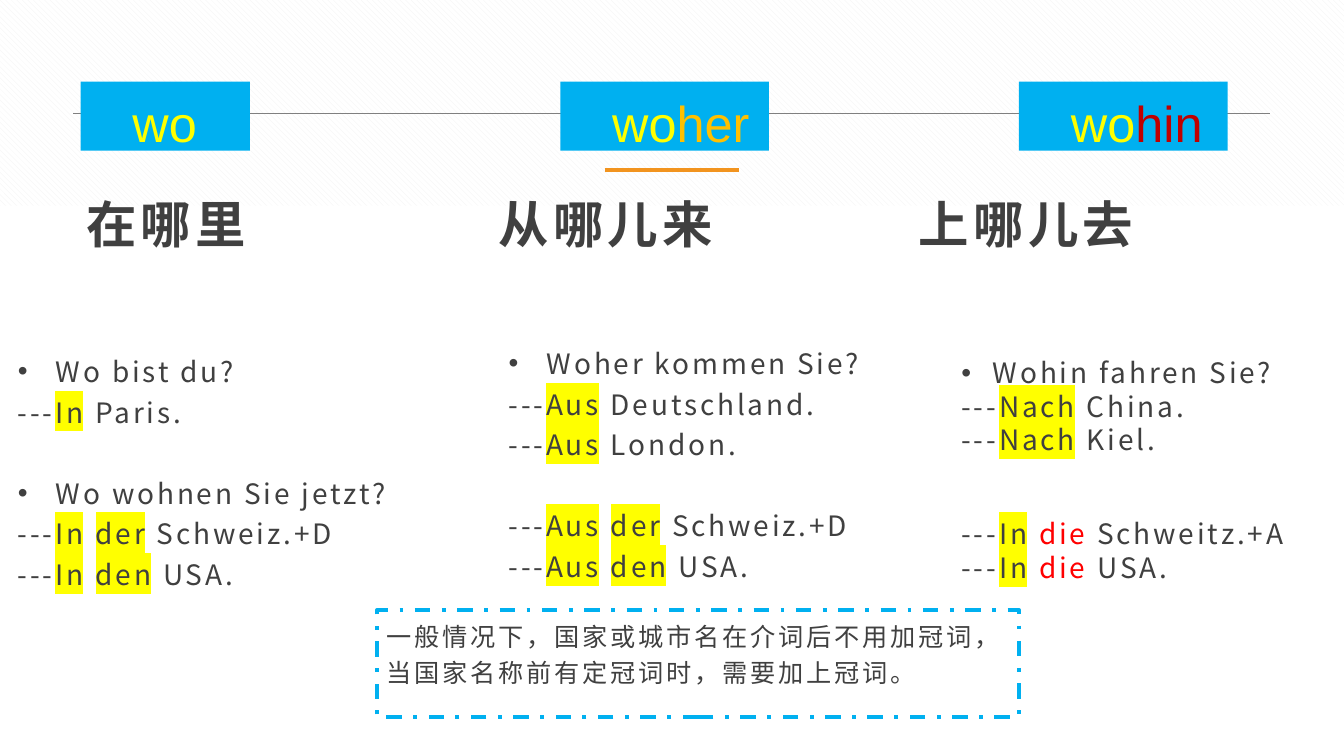
from dataclasses import dataclass

from lxml import etree
from pptx import Presentation
from pptx.dml.color import RGBColor
from pptx.enum.dml import MSO_LINE, MSO_PATTERN
from pptx.enum.shapes import MSO_CONNECTOR, MSO_SHAPE
from pptx.enum.text import MSO_ANCHOR, PP_ALIGN
from pptx.oxml.ns import qn
from pptx.util import Cm, Pt

STRAIGHT = MSO_CONNECTOR.STRAIGHT
RECTANGLE = MSO_SHAPE.RECTANGLE
DIAGONAL = MSO_PATTERN.WIDE_DOWNWARD_DIAGONAL
DASH_DOT = MSO_LINE.DASH_DOT
TOP = MSO_ANCHOR.TOP
LEFT = PP_ALIGN.LEFT


@dataclass(frozen=True)
class Theme:
    """Colours, fonts and type sizes of the slide."""

    white: str = "FFFFFF"
    hatch: str = "F2F2F2"
    rule: str = "808080"
    text: str = "404040"
    blue: str = "00B0F0"
    orange: str = "F2941F"
    gold: str = "FFC000"
    yellow: str = "FFFF00"
    red: str = "FF0000"
    dark_red: str = "C00000"
    latin: str = "Arial"
    body_font: str = "Noto Sans CJK SC"
    heading: int = 36
    body: int = 20
    note: int = 18


class SlideBuilder:
    """Draws styled elements on the current slide."""

    def __init__(self, slide, theme):
        self.slide = slide
        self.theme = theme

    def background(self):
        fill = self.slide.background.fill
        fill.patterned()
        fill.pattern = DIAGONAL
        fill.fore_color.rgb = RGBColor.from_string(self.theme.hatch)
        fill.back_color.rgb = RGBColor.from_string(self.theme.white)

    def line(self, left, right, top, color, width):
        connector = self.slide.shapes.add_connector(
            STRAIGHT, Cm(left), Cm(top), Cm(right), Cm(top))
        connector.line.color.rgb = RGBColor.from_string(color)
        connector.line.width = Pt(width)
        etree.SubElement(connector._element.spPr, qn("a:effectLst"))

    def rectangle(self, left, top, width, height, fill=None, border=None):
        shape = self.slide.shapes.add_shape(
            RECTANGLE, Cm(left), Cm(top), Cm(width), Cm(height))
        shape.shadow.inherit = False
        if fill:
            shape.fill.solid()
            shape.fill.fore_color.rgb = RGBColor.from_string(fill)
        else:
            shape.fill.background()
        if border:
            shape.line.color.rgb = RGBColor.from_string(border)
            shape.line.width = Pt(2.75)
            shape.line.dash_style = DASH_DOT
        else:
            shape.line.fill.background()
        shape.text_frame.vertical_anchor = TOP
        shape.text_frame.word_wrap = True
        return shape

    def text_box(self, left, top, width, height):
        shape = self.slide.shapes.add_textbox(Cm(left), Cm(top), Cm(width), Cm(height))
        shape.text_frame.word_wrap = True
        return shape.text_frame

    def format(self, run, size, font, color, spacing=0, bold=False, highlight=None):
        run.font.size = Pt(size)
        run.font.bold = bold
        run.font.color.rgb = RGBColor.from_string(color)
        run.font.name = font
        properties = run.font._element
        properties.set("spc", str(spacing * 100))
        properties.find(qn("a:latin")).addnext(
            etree.Element(qn("a:ea"), typeface=font))
        if highlight:
            mark = etree.Element(qn("a:highlight"))
            etree.SubElement(mark, qn("a:srgbClr"), val=highlight)
            properties.find(qn("a:solidFill")).addnext(mark)

    def plain(self, text_frame, text, size, line_height, spacing, bold=False):
        text_frame.text = text
        paragraph = text_frame.paragraphs[0]
        paragraph.alignment = LEFT
        paragraph.line_spacing = Pt(line_height)
        self.format(paragraph.runs[0], size, self.theme.body_font, self.theme.text,
                    spacing, bold)

    def tag(self, left, width, ending, color):
        text_frame = self.rectangle(left, 2.06, width, 1.74, self.theme.blue).text_frame
        text_frame.margin_left = Cm(1.31)
        text_frame.margin_right = text_frame.margin_bottom = Cm(0)
        text_frame.margin_top = Cm(0.25)
        text_frame.word_wrap = False
        paragraph = text_frame.paragraphs[0]
        paragraph.alignment = LEFT
        for text, run_color in (("wo", self.theme.yellow), (ending, color)):
            if text:
                run = paragraph.add_run()
                run.text = text
                self.format(run, self.theme.heading, self.theme.latin, run_color)

    def bullet(self, paragraph, indent):
        properties = paragraph._p.get_or_add_pPr()
        properties.set("marL", str(Cm(indent)))
        properties.set("indent", str(-Cm(indent)))
        etree.SubElement(properties, qn("a:buFont"), typeface=self.theme.latin)
        etree.SubElement(properties, qn("a:buChar"), char="•")

    def dialogue(self, box, lines, line_height, indent, gap, red_article=False):
        theme = self.theme
        text_frame = self.text_box(*box)
        article_style = (theme.red, None) if red_article else (theme.text, theme.yellow)
        for index, (gap_before, preposition, article, rest) in enumerate(lines):
            paragraph = text_frame.add_paragraph() if index else text_frame.paragraphs[0]
            paragraph.line_spacing = Pt(line_height)
            paragraph.space_before = Pt(gap if gap_before else 0)
            pieces = [(rest, theme.text, None)]
            if article:
                pieces = [(" ", theme.text, None), (article, *article_style)] + pieces
            if preposition:
                pieces = [("---", theme.text, None),
                          (preposition, theme.text, theme.yellow)] + pieces
            else:
                self.bullet(paragraph, indent)
            for text, color, highlight in pieces:
                run = paragraph.add_run()
                run.text = text
                self.format(run, theme.body, theme.body_font, color, 2,
                            highlight=highlight)


def main():
    """Build the slide on wo, woher and wohin."""
    presentation = Presentation()
    presentation.slide_width = Cm(33.87)
    presentation.slide_height = Cm(19.05)
    theme = Theme()
    slide = presentation.slides.add_slide(presentation.slide_layouts[6])
    builder = SlideBuilder(slide, theme)

    builder.background()
    builder.line(1.85, 32, 2.84, theme.rule, 0.25)
    builder.rectangle(0, 5.18, 33.87, 13.87, theme.white)
    builder.line(15.24, 18.62, 4.29, theme.orange, 3)

    for left, width, ending, color in (
            (2.03, 4.27, "", theme.yellow),
            (14.12, 5.26, "her", theme.gold),
            (25.68, 5.26, "hin", theme.dark_red)):
        builder.tag(left, width, ending, color)

    for left, meaning in ((1.92, "在哪里"), (12.32, "从哪儿来"), (22.91, "上哪儿去")):
        builder.plain(builder.text_box(left, 4.29, 7, 2.2), meaning,
                      theme.heading, 56, 3, bold=True)

    builder.dialogue((0.2, 8.63, 16.64, 10.24), (
        (False, "", "", "Wo bist du?"),
        (False, "In", "", " Paris."),
        (True, "", "", "Wo wohnen Sie jetzt?"),
        (False, "In", "der", " Schweiz.+D"),
        (False, "In", "den", " USA.")), 29, 0.96, 29)
    builder.dialogue((12.57, 8.43, 9.65, 10.24), (
        (False, "", "", "Woher kommen Sie?"),
        (False, "Aus", "", " Deutschland."),
        (False, "Aus", "", " London."),
        (True, "Aus", "der", " Schweiz.+D"),
        (False, "Aus", "den", " USA.")), 29, 0.96, 29)
    builder.dialogue((23.98, 8.84, 9.25, 5.79), (
        (False, "", "", "Wohin fahren Sie?"),
        (False, "Nach", "", " China."),
        (False, "Nach", "", " Kiel."),
        (True, "In", "die", " Schweitz.+A"),
        (False, "In", "die", " USA.")), 24, 0.79, 43, red_article=True)

    note = builder.rectangle(9.5, 15.37, 16.18, 2.69, border=theme.blue)
    builder.plain(note.text_frame,
                  "一般情况下，国家或城市名在介词后不用加冠词，当国家名称前有定冠词时，需要加上冠词。",
                  theme.note, 26, 2)
    presentation.save("out.pptx")


if __name__ == "__main__":
    main()
